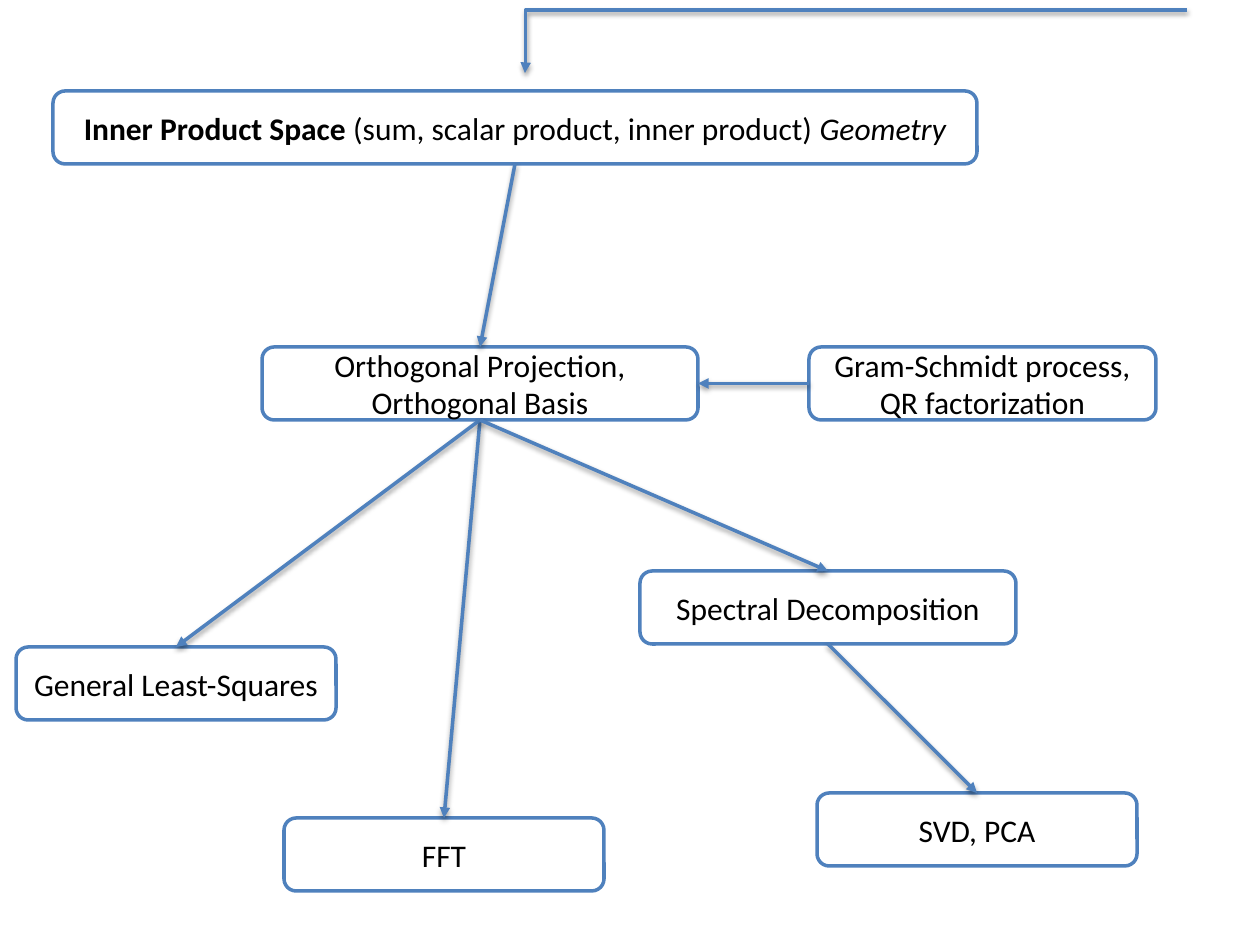
from lxml.etree import SubElement
from pptx import Presentation
from pptx.dml.color import RGBColor
from pptx.enum.shapes import MSO_CONNECTOR, MSO_SHAPE
from pptx.enum.text import MSO_ANCHOR, PP_ALIGN
from pptx.oxml.ns import qn
from pptx.util import Emu, Pt

COLORS = {"blue": "4F81BD", "white": "FFFFFF", "black": "000000"}
TOP, LEFT, BOTTOM, RIGHT = range(4)
BOX_HEIGHT = 73
LEAF_WIDTH = 320


def px(length):
    return Emu(round(length * 914400 / 126))


def color(name):
    return RGBColor.from_string(COLORS[name])


class ConceptMap:
    """Draws concept boxes and shadowed arrows in one style on one slide."""

    def __init__(self, slide, font="Calibri", size=18, line_width=2):
        self.slide = slide
        self.font = font
        self.size = size
        self.line_width = line_width

    def outline(self, line):
        line.color.rgb = color("blue")
        line.width = Pt(self.line_width)

    def box(self, left, top, width, *runs):
        concept = self.slide.shapes.add_shape(
            MSO_SHAPE.ROUNDED_RECTANGLE, px(left), px(top), px(width), px(BOX_HEIGHT))
        concept.shadow.inherit = False
        concept.fill.solid()
        concept.fill.fore_color.rgb = color("white")
        self.outline(concept.line)
        frame = concept.text_frame
        frame.word_wrap = True
        frame.vertical_anchor = MSO_ANCHOR.MIDDLE
        paragraph = frame.paragraphs[0]
        paragraph.alignment = PP_ALIGN.CENTER
        for text, bold, italic in runs:
            run = paragraph.add_run()
            run.text = text
            run.font.name = self.font
            run.font.size = Pt(self.size)
            run.font.bold = bold
            run.font.italic = italic
            run.font.color.rgb = color("black")
        return concept

    def plain_box(self, left, top, width, text):
        return self.box(left, top, width, (text, False, False))

    def arrow(self, kind, start=(0, 0), end=(0, 0)):
        link = self.slide.shapes.add_connector(
            kind, *(px(length) for length in (*start, *end)))
        self.outline(link.line)
        properties = link._element.spPr
        SubElement(properties.find(qn("a:ln")), qn("a:tailEnd"), type="triangle")
        effects = SubElement(properties, qn("a:effectLst"))
        shadow = SubElement(effects, qn("a:outerShdw"), blurRad=str(Pt(3.1)),
                            dist=str(Pt(1.6)), dir="5400000", rotWithShape="0")
        tint = SubElement(shadow, qn("a:srgbClr"), val=COLORS["black"])
        SubElement(tint, qn("a:alpha"), val="38000")
        return link

    def join(self, source, source_side, target, target_side):
        link = self.arrow(MSO_CONNECTOR.STRAIGHT)
        link.begin_connect(source, source_side)
        link.end_connect(target, target_side)

    def bent_arrow(self, start, end, bend):
        link = self.arrow(MSO_CONNECTOR.ELBOW, start, end)
        geometry = link._element.spPr.find(qn("a:prstGeom"))
        guides = geometry.find(qn("a:avLst"))
        if guides is None:
            guides = SubElement(geometry, qn("a:avLst"))
        SubElement(guides, qn("a:gd"), name="adj1", fmla=f"val {bend}")


def main():
    presentation = Presentation()
    presentation.slide_width, presentation.slide_height = px(1260), px(945)
    concept_map = ConceptMap(
        presentation.slides.add_slide(presentation.slide_layouts[6]))

    inner_product = concept_map.box(
        53, 91, 924,
        ("Inner Product Space ", True, False),
        ("(sum, scalar product, inner product) ", False, False),
        ("Geometry", False, True))
    concept_map.bent_arrow((1187, 10), (525, 73), 99900)

    plain = concept_map.plain_box
    projection = plain(262, 347, 436, "Orthogonal Projection, Orthogonal Basis")
    gram_schmidt = plain(809, 347, 347, "Gram-Schmidt process, QR factorization")
    least_squares = plain(16, 647, LEAF_WIDTH, "General Least-Squares")
    fft = plain(284, 818, LEAF_WIDTH, "FFT")
    svd = plain(817, 793, LEAF_WIDTH, "SVD, PCA")
    spectral = plain(640, 571, 376, "Spectral Decomposition")

    concept_map.join(gram_schmidt, LEFT, projection, RIGHT)
    for source, target in (
        (inner_product, projection),
        (projection, fft),
        (projection, least_squares),
        (projection, spectral),
        (spectral, svd),
    ):
        concept_map.join(source, BOTTOM, target, TOP)

    presentation.save("out.pptx")


if __name__ == "__main__":
    main()
